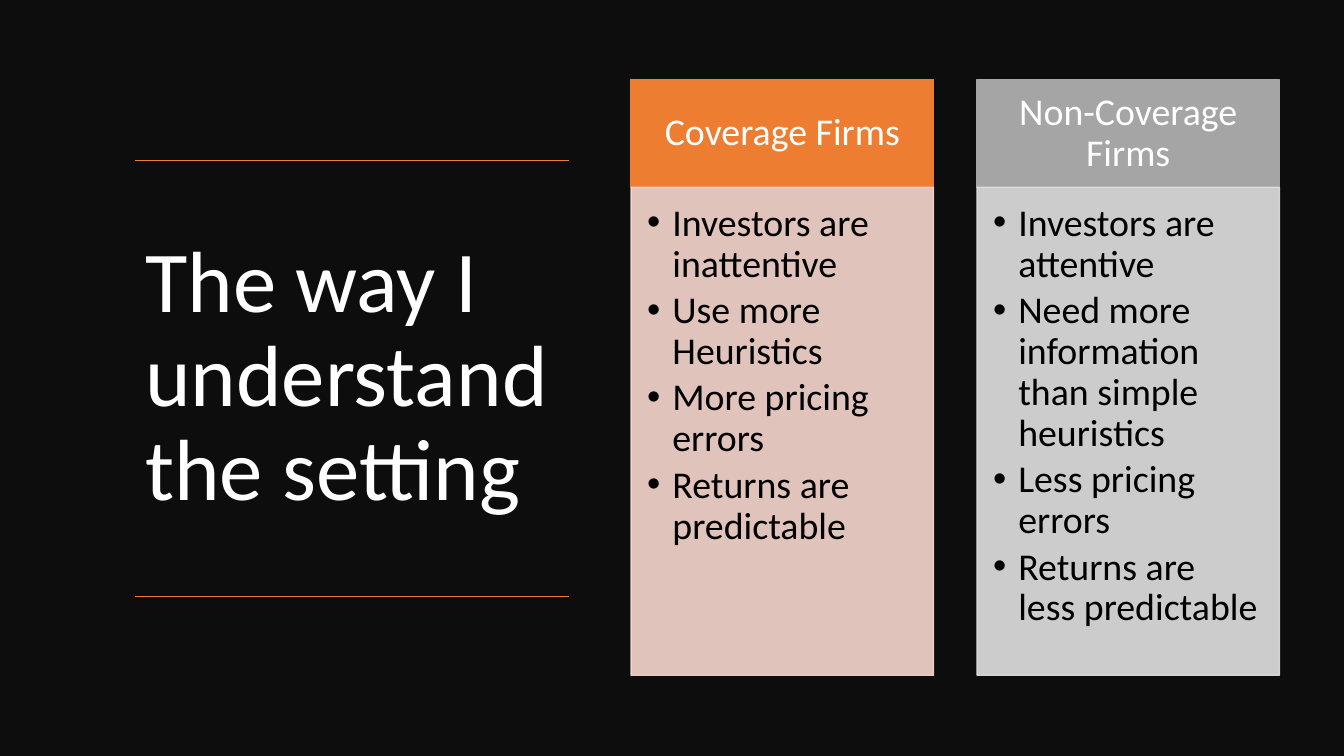
from lxml.etree import SubElement
from pptx import Presentation
from pptx.dml.color import RGBColor
from pptx.enum.shapes import MSO_CONNECTOR, MSO_SHAPE
from pptx.enum.text import MSO_ANCHOR, MSO_AUTO_SIZE, PP_ALIGN
from pptx.oxml.ns import qn
from pptx.util import Inches, Pt

BLACK = RGBColor(0x00, 0x00, 0x00)
WHITE = RGBColor(0xFF, 0xFF, 0xFF)
NIGHT = RGBColor(0x0D, 0x0D, 0x0D)
ORANGE = RGBColor(0xED, 0x7D, 0x31)
PEACH = RGBColor(0xF8, 0xD7, 0xCE)
GRAY = RGBColor(0xA5, 0xA5, 0xA5)
SILVER = RGBColor(0xE1, 0xE1, 0xE1)

# Title block and card grid, in inches
TITLE_X, TITLE_Y, TITLE_W, TITLE_H = 1.34, 1.59, 4.3, 4.33
CARD_X, CARD_Y, CARD_W, CARD_PITCH = 6.26, 0.79, 3, 3.43
HEAD_H, BODY_H = 1.07, 4.84

HEAD_FRAME = dict(margin_left=Inches(0.21), margin_top=Inches(0.12),
                  margin_right=Inches(0.21), margin_bottom=Inches(0.12),
                  vertical_anchor=MSO_ANCHOR.MIDDLE)
BODY_FRAME = dict(margin_left=Inches(0.16), margin_top=Inches(0.16),
                  margin_right=Inches(0.21), margin_bottom=Inches(0.24),
                  vertical_anchor=MSO_ANCHOR.TOP)

CARDS = [
    ("Coverage Firms", ORANGE, PEACH,
     ["Investors are inattentive", "Use more Heuristics",
      "More pricing errors", "Returns are predictable"]),
    ("Non-Coverage Firms", GRAY, SILVER,
     ["Investors are attentive",
      "Need more information than simple heuristics",
      "Less pricing errors", "Returns are less predictable"]),
]


def set_attrs(obj, values):
    for name, value in values.items():
        setattr(obj, name, value)


def write(tf, lines, size, color, frame, align=PP_ALIGN.LEFT, after=0):
    set_attrs(tf, dict(frame, word_wrap=True, auto_size=MSO_AUTO_SIZE.NONE))
    for i, line in enumerate(lines):
        p = tf.paragraphs[0] if i == 0 else tf.add_paragraph()
        set_attrs(p, dict(alignment=align, line_spacing=0.9,
                          space_before=Pt(0), space_after=Pt(after)))
        r = p.add_run()
        r.text = line
        set_attrs(r.font, dict(name="Calibri", size=Pt(size)))
        r.font.color.rgb = color


def add_bullets(tf):
    indent = Inches(0.25)
    for p in tf.paragraphs:
        pPr = p._p.get_or_add_pPr()
        pPr.set("marL", str(indent))
        pPr.set("indent", str(-indent))
        SubElement(pPr, qn("a:buFont")).set("typeface", "Arial")
        SubElement(pPr, qn("a:buChar")).set("char", "•")


def add_box(s, x, y, w, h, color, opacity=100):
    sp = s.shapes.add_shape(MSO_SHAPE.RECTANGLE, *map(Inches, (x, y, w, h)))
    sp.shadow.inherit = False
    sp.fill.solid()
    sp.fill.fore_color.rgb = color
    sp.line.color.rgb = color
    sp.line.width = Pt(1)
    if opacity < 100:
        for clr in sp._element.spPr.iter(qn("a:srgbClr")):
            SubElement(clr, qn("a:alpha")).set("val", str(opacity * 1000))
    return sp


def add_rule(s, y):
    line = s.shapes.add_connector(
        MSO_CONNECTOR.STRAIGHT,
        *map(Inches, (TITLE_X + TITLE_W, y, TITLE_X, y)))
    line.line.color.rgb = ORANGE
    line.line.width = Pt(1)
    SubElement(line._element.spPr, qn("a:effectLst"))


def add_title(s, text):
    title = s.shapes.title
    set_attrs(title, dict(left=Inches(TITLE_X), top=Inches(TITLE_Y),
                          width=Inches(TITLE_W), height=Inches(TITLE_H)))
    write(title.text_frame, [text], 62, WHITE,
          dict(vertical_anchor=MSO_ANCHOR.MIDDLE))


def add_card(s, x, heading, strong, pale, points):
    head = add_box(s, x, CARD_Y, CARD_W, HEAD_H, strong)
    write(head.text_frame, [heading], 27, WHITE, HEAD_FRAME, PP_ALIGN.CENTER)
    body = add_box(s, x, CARD_Y + HEAD_H, CARD_W, BODY_H, pale, opacity=90)
    write(body.text_frame, points, 27, BLACK, BODY_FRAME, after=4)
    add_bullets(body.text_frame)


def main():
    prs = Presentation()
    prs.slide_width, prs.slide_height = Inches(13.33), Inches(7.5)
    s = prs.slides.add_slide(prs.slide_layouts[5])
    s.background.fill.solid()
    s.background.fill.fore_color.rgb = NIGHT

    # Title between two rules
    add_title(s, "The way I understand the setting")
    for y in (TITLE_Y, TITLE_Y + TITLE_H):
        add_rule(s, y)

    # Comparison cards
    for col, card in enumerate(CARDS):
        add_card(s, CARD_X + col * CARD_PITCH, *card)

    prs.save("out.pptx")


if __name__ == "__main__":
    main()
